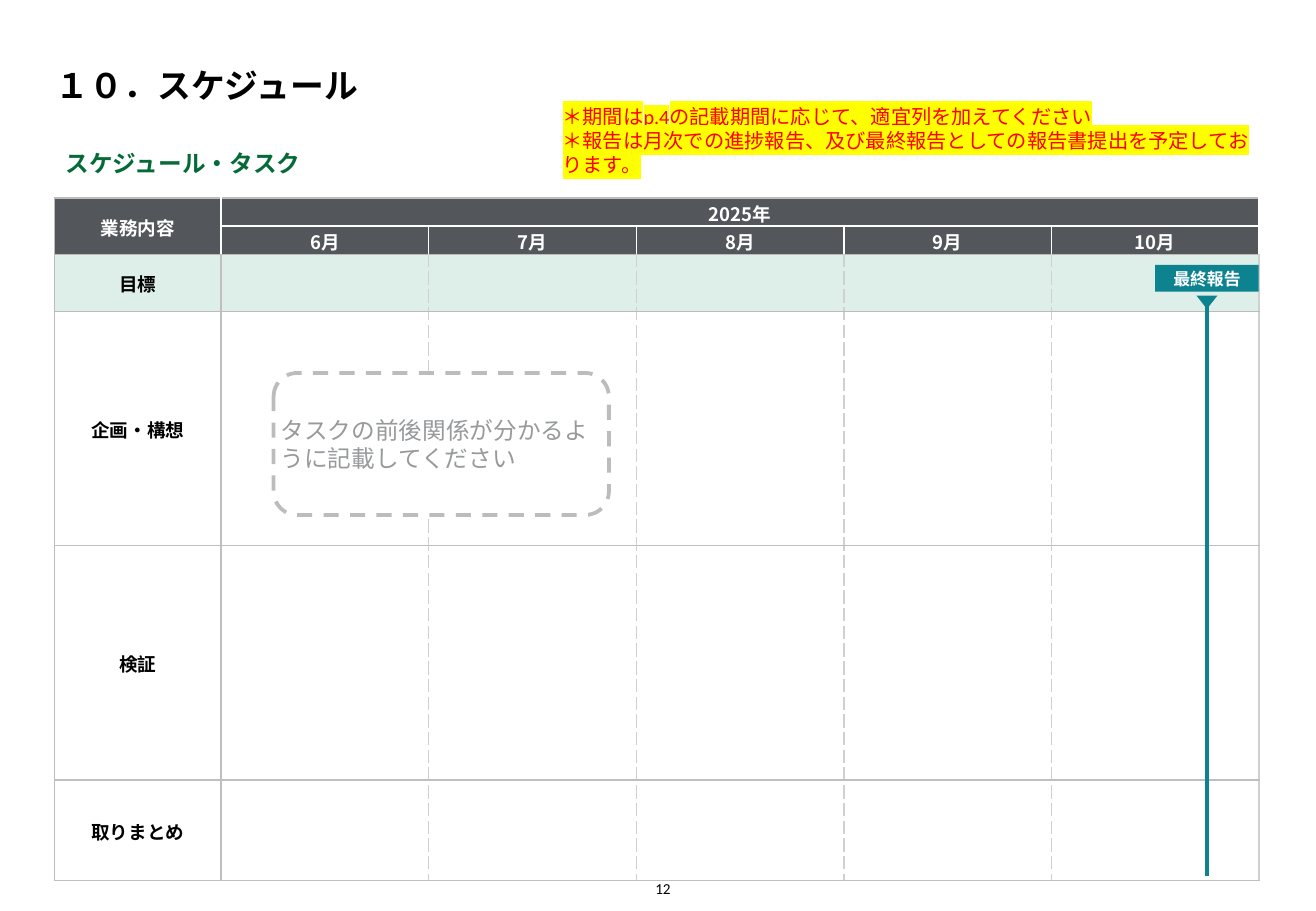
import pptx
import pptx.dml.color
import pptx.enum.dml
import pptx.enum.shapes
import pptx.enum.text
import pptx.oxml
import pptx.oxml.ns
import pptx.util

Cm = pptx.util.Cm
Pt = pptx.util.Pt
SHAPE = pptx.enum.shapes.MSO_SHAPE
ALIGN = pptx.enum.text.PP_ALIGN
ANCHOR = pptx.enum.text.MSO_ANCHOR
NAMESPACE = pptx.oxml.ns.nsdecls("a")

CALIBRI = "Calibri"
NOTO = "Noto Sans CJK JP"
TEAL = "0D8390"
HEADER_GREY = "53565A"
WHITE = "FFFFFF"
BLACK = "000000"
GREY = "BCBCB9"
LIGHT_GREY = "BFBFBF"
PALE_GREY = "D0D0CE"

MONTHS = ["6月", "7月", "8月", "9月", "10月"]
TASKS = ["目標", "企画・構想", "検証", "取りまとめ"]
ROW_HEIGHTS = [0.59, 0.59, 1.19, 4.9, 4.9, 2.1]
ROW_LINES = [GREY, WHITE, GREY, GREY, LIGHT_GREY, LIGHT_GREY, LIGHT_GREY]
TASK_WIDTH, MONTH_WIDTH = 3.48, 4.34


def colour(value):
    return pptx.dml.color.RGBColor.from_string(value)


def style(para, size, font_colour, font=CALIBRI, bold=False, align=ALIGN.LEFT):
    para.alignment = align
    para.font.size = Pt(size)
    para.font.name = font
    para.font.bold = bold
    para.font.color.rgb = colour(font_colour)


def write(shape, lines, anchor, margins=(0, 0, 0, 0), **font):
    frame = shape.text_frame
    frame.word_wrap = True
    frame.vertical_anchor = anchor
    frame.margin_left, frame.margin_top, frame.margin_right, frame.margin_bottom = map(Cm, margins)
    frame.text = "\n".join(lines)
    for para in frame.paragraphs:
        style(para, **font)


def add_text(page, box, lines, anchor=ANCHOR.MIDDLE, **options):
    shape = page.shapes.add_textbox(*map(Cm, box))
    write(shape, lines, anchor, **options)
    return shape


def add_block(page, kind, box, fill):
    shape = page.shapes.add_shape(kind, *map(Cm, box))
    shape.shadow.inherit = False
    shape.fill.solid()
    shape.fill.fore_color.rgb = colour(fill)
    shape.line.fill.background()
    return shape


def column_line(row, column):
    if column == 0:
        return GREY, "solid"
    if column == len(MONTHS) + 1:
        return [BLACK, WHITE][row] if row < 2 else PALE_GREY, "solid"
    if row < 2:
        return WHITE, "solid"
    return (LIGHT_GREY, "solid") if column == 1 else (PALE_GREY, "sysDash")


def row_line(row, column):
    return (GREY if column == 0 and row == 1 else ROW_LINES[row]), "solid"


def set_borders(cell, row, column):
    borders = {
        "lnL": column_line(row, column),
        "lnR": column_line(row, column + 1),
        "lnT": row_line(row, column),
        "lnB": row_line(row + 1, column),
    }
    properties = cell._tc.get_or_add_tcPr()
    for tag, (line_colour, dash) in borders.items():
        properties.append(pptx.oxml.parse_xml(
            f'<a:{tag} {NAMESPACE} w="12700"><a:solidFill><a:srgbClr val="{line_colour}"/>'
            f'</a:solidFill><a:prstDash val="{dash}"/></a:{tag}>'))


def cell_text(row, column):
    if row == 0:
        return {0: "業務内容", 1: "2025年"}.get(column, "")
    if row == 1:
        return MONTHS[column - 1] if column else ""
    return "" if column else TASKS[row - 2]


def add_schedule(page, left, top):
    width = TASK_WIDTH + MONTH_WIDTH * len(MONTHS)
    frame = page.shapes.add_table(len(ROW_HEIGHTS), len(MONTHS) + 1, Cm(left), Cm(top),
                                  Cm(width), Cm(sum(ROW_HEIGHTS)))
    table = frame.table
    table.first_row = table.horz_banding = False
    for index, column in enumerate(table.columns):
        column.width = Cm(MONTH_WIDTH if index else TASK_WIDTH)
    for row, height in enumerate(ROW_HEIGHTS):
        table.rows[row].height = Cm(height)
        fill = HEADER_GREY if row < 2 else "DDEFE8" if row == 2 else WHITE
        for column in range(len(MONTHS) + 1):
            cell = table.cell(row, column)
            set_borders(cell, row, column)
            cell.fill.solid()
            cell.fill.fore_color.rgb = colour(fill)
            cell.vertical_anchor = ANCHOR.MIDDLE
            cell.margin_left = cell.margin_right = Cm(0.1)
            cell.margin_top = cell.margin_bottom = 0
            cell.text = cell_text(row, column)
            para = cell.text_frame.paragraphs[0]
            para.line_spacing = 1.06
            style(para, 11, WHITE if row < 2 else BLACK, NOTO, True, ALIGN.CENTER)
    table.cell(0, 0).merge(table.cell(1, 0))
    table.cell(0, 1).merge(table.cell(0, len(MONTHS)))


def add_milestone(page, left, top, width, length):
    centre = left + width / 2
    pointer = add_block(page, SHAPE.ISOSCELES_TRIANGLE, (centre - 0.22, top + 0.64, 0.44, 0.28), TEAL)
    pointer.rotation = 180
    label = add_block(page, SHAPE.RECTANGLE, (left, top, width, 0.56), TEAL)
    write(label, ["最終報告"], ANCHOR.MIDDLE, (0.1,) * 4, size=10, font_colour=WHITE,
          font=NOTO, bold=True, align=ALIGN.CENTER)
    line = page.shapes.add_connector(pptx.enum.shapes.MSO_CONNECTOR.STRAIGHT, Cm(centre),
                                     Cm(top + 0.68), Cm(centre), Cm(top + length))
    line.line.color.rgb = colour(TEAL)
    line.line.width = Pt(2.25)
    line._element.spPr.append(pptx.oxml.parse_xml(f"<a:effectLst {NAMESPACE}/>"))


def add_hint(page, box):
    hint = add_block(page, SHAPE.ROUNDED_RECTANGLE, box, WHITE)
    hint.line.color.rgb = colour("BBBCBC")
    hint.line.width = Pt(2.25)
    hint.line.dash_style = pptx.enum.dml.MSO_LINE.DASH
    write(hint, ["タスクの前後関係が分かるように記載してください"], ANCHOR.MIDDLE,
          size=14, font_colour="97999B")


def add_instructions(page, box):
    lines = ["＊期間はp.4の記載期間に応じて、適宜列を加えてください",
             "＊報告は月次での進捗報告、及び最終報告としての報告書提出を予定しております。"]
    shape = add_text(page, box, lines, size=12, font_colour="FF0000")
    for para in shape.text_frame.paragraphs:
        for span in para.runs:
            span._r.get_or_add_rPr().append(pptx.oxml.parse_xml(
                f'<a:highlight {NAMESPACE}><a:srgbClr val="FFFF00"/></a:highlight>'))


def add_headings(page, left, top):
    add_text(page, (left, top, 25.2, 1.7), ["１０．スケジュール"], ANCHOR.BOTTOM,
             size=20, font_colour=BLACK, bold=True)
    add_text(page, (left, top + 2.31, 12.1, 1.2), ["スケジュール・タスク"],
             margins=(0.2, 0, 0, 0), size=14, font_colour="046A38", bold=True)


def build_schedule_page(deck):
    page = deck.slides.add_slide(deck.slide_layouts[6])
    add_text(page, (13.51, 18.29, 0.51, 0.48), ["12"], ANCHOR.BOTTOM,
             size=9, font_colour=BLACK, align=ALIGN.RIGHT)
    add_schedule(page, 1.14, 4.14)
    add_milestone(page, 24.15, 5.54, 2.16, 12.77)
    add_headings(page, 1.17, 0.51)
    add_hint(page, (5.72, 7.8, 7.01, 2.97))
    add_instructions(page, (11.76, 2.24, 14.6, 1.4))


def main():
    deck = pptx.Presentation()
    deck.slide_width = Cm(27.51)
    deck.slide_height = Cm(19.05)
    build_schedule_page(deck)
    deck.save("out.pptx")


if __name__ == "__main__":
    main()
